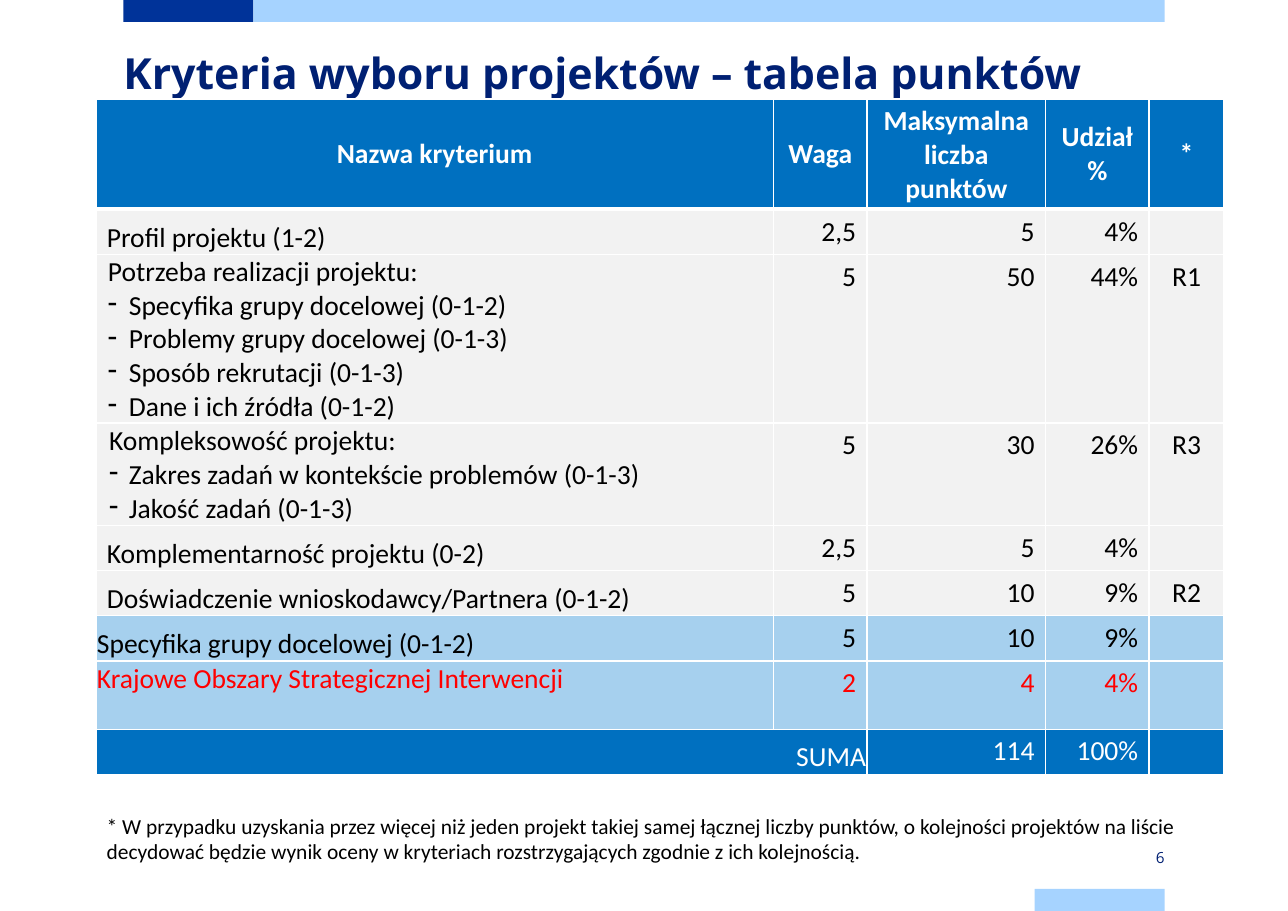
import pptx
import pptx.util
import pptx.dml.color
import pptx.enum.text
import pptx.enum.shapes
import pptx.oxml.ns
import lxml.etree

Inches = pptx.util.Inches
Pt = pptx.util.Pt
RGB = pptx.dml.color.RGBColor
Align = pptx.enum.text.PP_ALIGN
Anchor = pptx.enum.text.MSO_ANCHOR
qn = pptx.oxml.ns.qn

NAVY = RGB(0x00, 0x20, 0x73)
ROYAL = RGB(0x00, 0x33, 0x99)
SKY = RGB(0xA6, 0xD3, 0xFF)
BLUE = RGB(0x00, 0x70, 0xC0)
PALE = RGB(0xA6, 0xD0, 0xEE)
GREY = RGB(0xF2, 0xF2, 0xF2)
WHITE = RGB(0xFF, 0xFF, 0xFF)
BLACK = RGB(0x00, 0x00, 0x00)
RED = RGB(0xFF, 0x00, 0x00)


class Page:
    head = "Open Sans"
    body = "Calibri"

    def __init__(self, deck):
        self.slide = deck.slides.add_slide(deck.slide_layouts[5])
        self.shapes = self.slide.shapes

    def style(self, para, text, size, color, face=None, bold=False, align=Align.LEFT):
        para.text = text
        para.alignment = align
        font = para.font
        font.name = face or self.body
        font.size = Pt(size)
        font.bold = bold
        font.color.rgb = color

    def inset(self, item, left, top, right, bottom):
        item.margin_left, item.margin_top = Inches(left), Inches(top)
        item.margin_right, item.margin_bottom = Inches(right), Inches(bottom)

    def bar(self, left, top, width, color):
        shape = self.shapes.add_shape(
            pptx.enum.shapes.MSO_SHAPE.RECTANGLE,
            Inches(left), Inches(top), Inches(width), Inches(0.2))
        shape.shadow.inherit = False
        shape.fill.solid()
        shape.fill.fore_color.rgb = color
        shape.line.fill.background()

    def title(self, text, left, top, width, height):
        shape = self.shapes.title
        shape.left, shape.top = Inches(left), Inches(top)
        shape.width, shape.height = Inches(width), Inches(height)
        frame = shape.text_frame
        frame.auto_size = pptx.enum.text.MSO_AUTO_SIZE.NONE
        frame.vertical_anchor = Anchor.TOP
        self.inset(frame, 0, 0, 0, 0)
        para = frame.paragraphs[0]
        self.style(para, text, 28, NAVY, self.head, True)
        para.line_spacing = Pt(36)

    def text(self, text, left, top, width, height, size, color, **kind):
        frame = self.shapes.add_textbox(
            Inches(left), Inches(top), Inches(width), Inches(height)).text_frame
        frame.word_wrap = True
        self.style(frame.paragraphs[0], text, size, color, **kind)
        return frame

    def table(self, left, top, widths, heights):
        table = self.shapes.add_table(
            len(heights), len(widths), Inches(left), Inches(top),
            Inches(sum(widths)), Inches(sum(heights))).table
        table.horz_banding = False
        for col, width in zip(table.columns, widths):
            col.width = Inches(width)
        for row, height in zip(table.rows, heights):
            row.height = Inches(height)
        return table

    def paint(self, cell, fill, base=1):
        """Draw white borders, then fill the cell."""
        props = cell._tc.get_or_add_tcPr()
        for side, width in (("L", 1), ("R", 1), ("T", 1), ("B", base)):
            line = lxml.etree.SubElement(props, qn("a:ln" + side), w=str(Pt(width)))
            solid = lxml.etree.SubElement(line, qn("a:solidFill"))
            lxml.etree.SubElement(solid, qn("a:srgbClr"), val=str(WHITE))
        cell.fill.solid()
        cell.fill.fore_color.rgb = fill

    def label(self, cell, lines, color, left, hang, align, anchor):
        """Write a criterion; every line after the first is a dash item."""
        self.inset(cell, 0.01, 0.01, 0.01, 0)
        cell.vertical_anchor = anchor
        frame = cell.text_frame
        for i, line in enumerate(lines):
            para = frame.add_paragraph() if i else frame.paragraphs[0]
            props = para._p.get_or_add_pPr()
            props.set("marL", str(Inches(left)))
            props.set("indent", str(Inches(-hang)))
            if i:
                lxml.etree.SubElement(props, qn("a:buChar"), char="-")
            self.style(para, line, 18, color, align=align)


HEADS = ["Nazwa kryterium", "Waga", "Maksymalna liczba punktów", "Udział %", "*"]
# Lines of the criterion, values, fill, text colour, indent, hanging
ROWS = [
    (["Profil projektu (1-2)"], ["2,5", "5", "4%", ""], GREY, BLACK, 0.09, 0),
    (["Potrzeba realizacji projektu:", "Specyfika grupy docelowej (0-1-2)",
      "Problemy grupy docelowej (0-1-3)", "Sposób rekrutacji (0-1-3)",
      "Dane i ich źródła (0-1-2)"],
     ["5", "50", "44%", "R1"], GREY, BLACK, 0.29, 0.19),
    (["Kompleksowość projektu:", "Zakres zadań w kontekście problemów (0-1-3)",
      "Jakość zadań (0-1-3)"],
     ["5", "30", "26%", "R3"], GREY, BLACK, 0.29, 0.18),
    (["Komplementarność projektu (0-2)"], ["2,5", "5", "4%", ""], GREY, BLACK, 0.09, 0),
    (["Doświadczenie wnioskodawcy/Partnera (0-1-2)"], ["5", "10", "9%", "R2"],
     GREY, BLACK, 0.09, 0),
    (["Specyfika grupy docelowej (0-1-2)"], ["5", "10", "9%", ""], PALE, BLACK, 0, 0),
    (["Krajowe Obszary Strategicznej Interwencji"], ["2", "4", "4%", ""], PALE, RED, 0, 0),
    (["SUMA"], ["", "114", "100%", ""], BLUE, WHITE, 0.09, 0),
]
WIDTHS = [6.15, 0.85, 1.62, 0.94, 0.68]
HIGHS = [1, 0.41, 1.53, 0.93, 0.41, 0.41, 0.41, 0.62, 0.41]


def main():
    deck = pptx.Presentation()
    deck.slide_width, deck.slide_height = Inches(11.69), Inches(8.27)
    page = Page(deck)

    # Bars and page number
    page.bar(1.12, 0, 1.18, ROYAL)
    page.bar(2.3, 0, 8.27, SKY)
    page.bar(9.39, 8.07, 1.18, SKY)
    num = page.text("6", 9.39, 7.68, 1.18, 0.2, 10, NAVY,
                    face=page.head, align=Align.RIGHT)
    num.vertical_anchor = Anchor.MIDDLE
    page.inset(num, 0, 0.08, 0, 0.08)

    page.title("Kryteria wyboru projektów – tabela punktów", 1.12, 0.39, 9.45, 0.71)

    # Table head
    table = page.table(0.87, 0.9, WIDTHS, HIGHS)
    for c, head in enumerate(HEADS):
        cell = table.cell(0, c)
        cell.vertical_anchor = Anchor.MIDDLE
        page.paint(cell, BLUE, 3)
        page.style(cell.text_frame.paragraphs[0], head, 18, WHITE,
                   bold=True, align=Align.CENTER)

    # Criteria and total
    last = len(ROWS)
    for r, (lines, values, fill, color, left, hang) in enumerate(ROWS, 1):
        cell = table.cell(r, 0)
        align = Align.RIGHT if r == last else Align.LEFT
        anchor = Anchor.TOP if color == RED else Anchor.BOTTOM
        page.label(cell, lines, color, left, hang, align, anchor)
        page.paint(cell, fill)
        for c, value in enumerate(values, 1):
            cell = table.cell(r, c)
            page.paint(cell, fill)
            page.style(cell.text_frame.paragraphs[0], value, 18, color,
                       align=Align.CENTER if c == 4 else Align.RIGHT)
    table.cell(last, 0).merge(table.cell(last, 1))

    # Footnote
    page.text("* W przypadku uzyskania przez więcej niż jeden projekt takiej samej "
              "łącznej liczby punktów, o kolejności projektów na liście decydować "
              "będzie wynik oceny w kryteriach rozstrzygających zgodnie z ich "
              "kolejnością.", 0.87, 7.33, 10.25, 0.57, 14, BLACK)

    deck.save("out.pptx")


if __name__ == "__main__":
    main()
